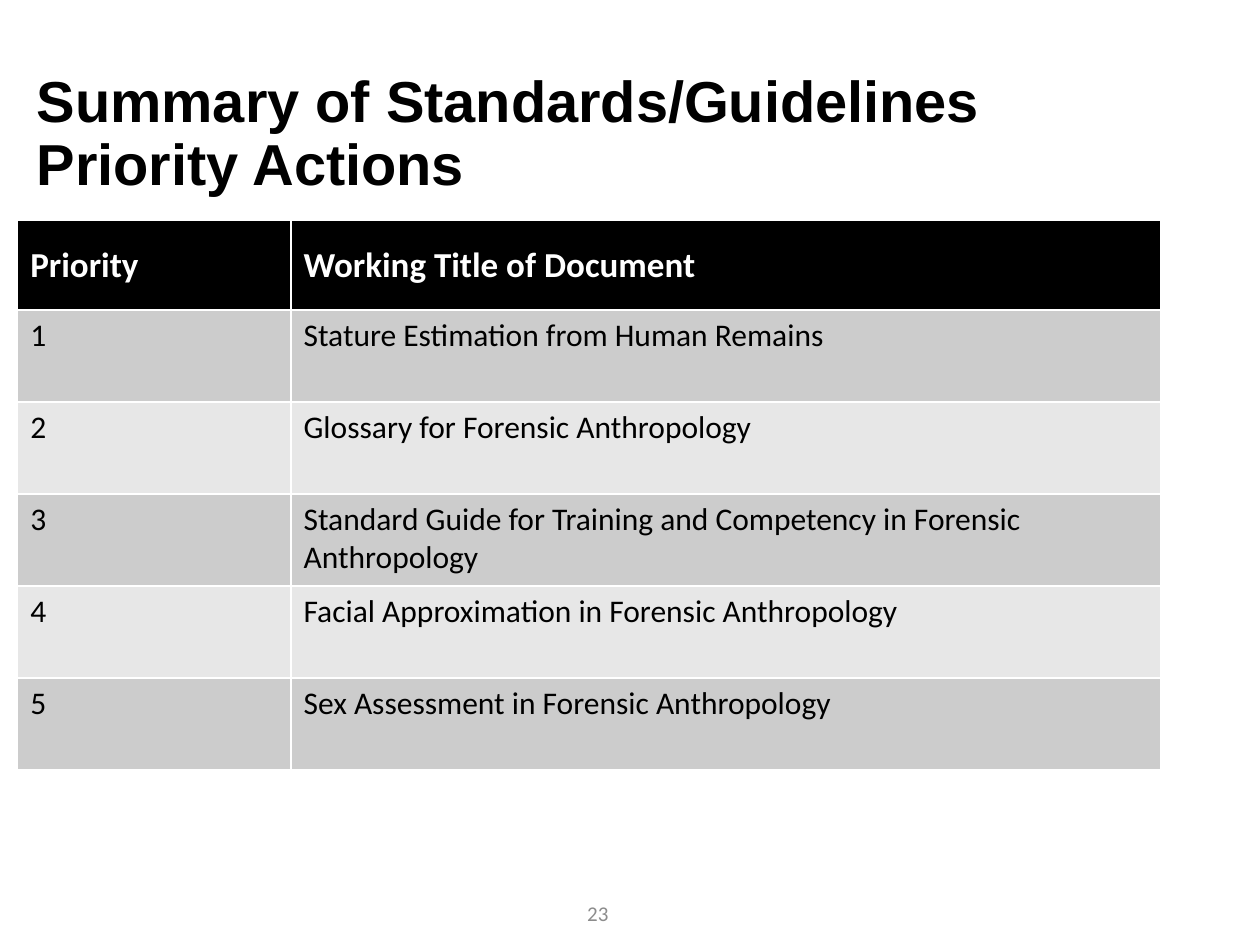
from dataclasses import dataclass

from pptx import Presentation
from pptx import util as u
from pptx.dml.color import RGBColor
from pptx.enum import text


@dataclass(frozen=True)
class Theme:
    title_font: str = "Arial"
    body_font: str = "Calibri"
    title_size: int = 33
    header_size: int = 20
    body_size: int = 18
    number_size: int = 12
    dark: str = "000000"
    light: str = "FFFFFF"
    bands: tuple = ("CCCCCC", "E7E7E7")
    muted: str = "8C8C8C"


theme = Theme()


def style(paragraph, name, size, color, bold=False):
    font = paragraph.font
    font.name, font.size, font.bold = name, u.Pt(size), bold
    font.color.rgb = RGBColor.from_string(color)


deck = Presentation()
deck.slide_width, deck.slide_height = u.Inches(10), u.Inches(7.5)
page = deck.slides.add_slide(deck.slide_layouts[5])

# Title
title = page.shapes.title
title.left, title.top = u.Inches(0.19), u.Inches(0.35)
title.width, title.height = u.Inches(8.62), u.Inches(1.45)
title.text_frame.text = "Summary of Standards/Guidelines Priority Actions"
title.text_frame.vertical_anchor = text.MSO_ANCHOR.MIDDLE
title.text_frame.auto_size = text.MSO_AUTO_SIZE.NONE
heading = title.text_frame.paragraphs[0]
heading.alignment = text.PP_ALIGN.LEFT
heading.line_spacing = 0.9
style(heading, theme.title_font, theme.title_size, theme.dark, bold=True)

# Priority table: header row, then numbered documents in alternating bands
documents = [
    "Stature Estimation from Human Remains",
    "Glossary for Forensic Anthropology",
    "Standard Guide for Training and Competency in Forensic Anthropology",
    "Facial Approximation in Forensic Anthropology",
    "Sex Assessment in Forensic Anthropology",
]
rows = [("Priority", "Working Title of Document")]
rows += [(str(number), name) for number, name in enumerate(documents, 1)]

table = page.shapes.add_table(
    len(rows), 2, u.Inches(0.14), u.Inches(1.75), u.Inches(9.07), u.Inches(4.36)
).table
for column, width in zip(table.columns, (2.17, 6.9)):
    column.width = u.Inches(width)

for row_index, values in enumerate(rows):
    is_header = row_index == 0
    table.rows[row_index].height = u.Inches(0.71 if is_header else 0.73)
    fill = theme.dark if is_header else theme.bands[(row_index - 1) % 2]
    for column_index, value in enumerate(values):
        cell = table.cell(row_index, column_index)
        cell.text = value
        cell.fill.solid()
        cell.fill.fore_color.rgb = RGBColor.from_string(fill)
        paragraph = cell.text_frame.paragraphs[0]
        if is_header:
            cell.vertical_anchor = text.MSO_ANCHOR.MIDDLE
            style(paragraph, theme.body_font, theme.header_size, theme.light, bold=True)
        else:
            style(paragraph, theme.body_font, theme.body_size, theme.dark)

# Page number
box = page.shapes.add_textbox(u.Inches(3.62), u.Inches(7.05), u.Inches(2.25), u.Inches(0.4))
box.text_frame.word_wrap = True
box.text_frame.vertical_anchor = text.MSO_ANCHOR.MIDDLE
box.text_frame.text = "23"
number = box.text_frame.paragraphs[0]
number.alignment = text.PP_ALIGN.CENTER
style(number, theme.body_font, theme.number_size, theme.muted)

deck.save("out.pptx")
